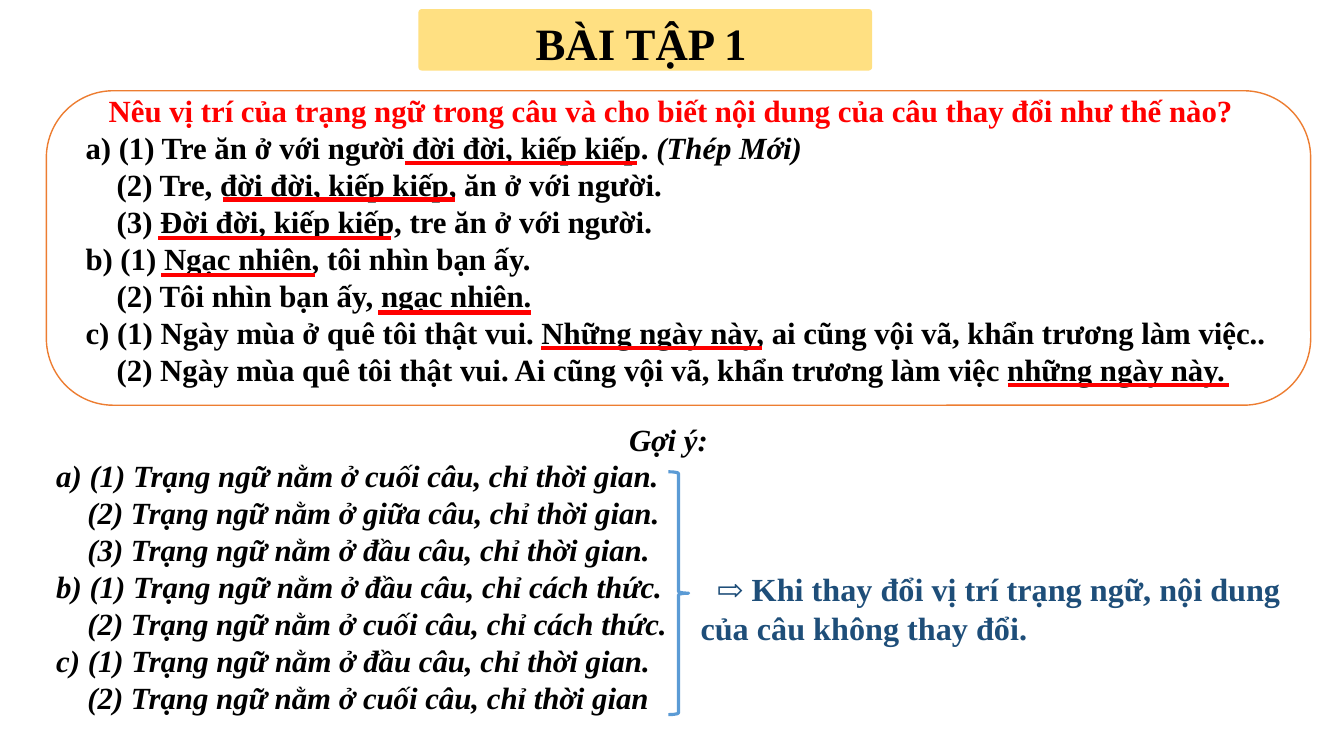
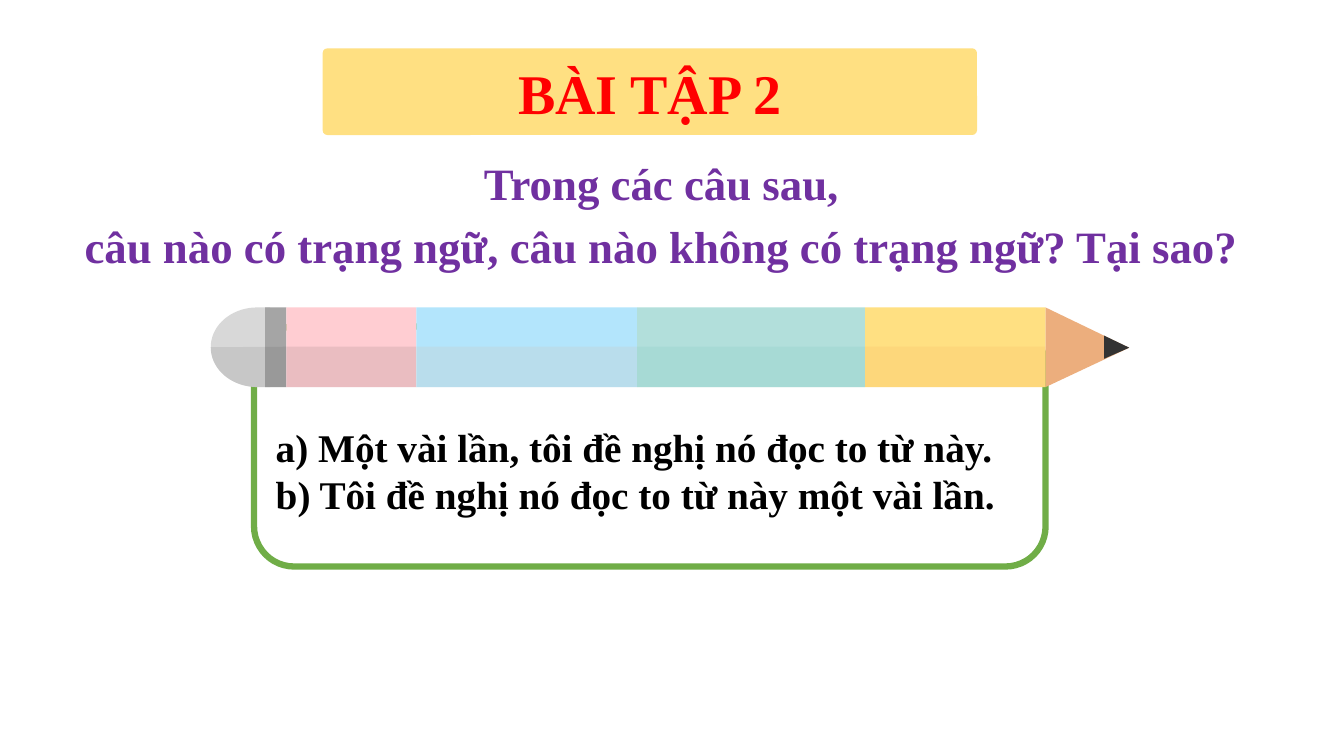
"""Build two grammar exercise slides on Vietnamese adverbials."""
from math import cos, radians, sin

from lxml import etree
from pptx import Presentation
from pptx.dml.color import RGBColor
from pptx.enum.shapes import MSO_CONNECTOR, MSO_SHAPE
from pptx.enum.text import MSO_ANCHOR, PP_ALIGN
from pptx.oxml.ns import qn
from pptx.util import Inches, Pt

RECT, ROUND, BRACE = MSO_SHAPE.RECTANGLE, MSO_SHAPE.ROUNDED_RECTANGLE, MSO_SHAPE.RIGHT_BRACE
LEFT, CENTER = PP_ALIGN.LEFT, PP_ALIGN.CENTER
TOP, MIDDLE = MSO_ANCHOR.TOP, MSO_ANCHOR.MIDDLE
STRAIGHT = MSO_CONNECTOR.STRAIGHT

FONT = "Times New Roman"
INSETS = (0.1, 0.05, 0.1, 0.05)
SUB_INDENT = 0.31
COLORS = {
    "white": "FFFFFF", "black": "000000", "red": "FF0000", "purple": "7030A0",
    "navy": "1E4E79", "blue": "5B9BD5", "orange": "ED7D31", "green": "70AD47",
    "yellow": "FFE082", "eraser": "D8D8D8", "ferrule": "A5A5A5", "pink": "FFCDD2",
    "sky": "B3E5FC", "mint": "B2DFDB", "wood": "ECAE7D", "lead": "333333",
    "peach": "F19D63", "teal": "98D4CE", "amber": "EE8944",
}

QUESTION = "Nêu vị trí của trạng ngữ trong câu và cho biết nội dung của câu thay đổi như thế nào?"
SENTENCES = [
    "a) (1) Tre ăn ở với người đời đời, kiếp kiếp. ",
    "(2) Tre, đời đời, kiếp kiếp, ăn ở với người.",
    "(3) Đời đời, kiếp kiếp, tre ăn ở với người.",
    "b) (1) Ngạc nhiên, tôi nhìn bạn ấy.",
    "(2) Tôi nhìn bạn ấy, ngạc nhiên.",
    "c) (1) Ngày mùa ở quê tôi thật vui. Những ngày này, ai cũng vội vã, khẩn trương làm việc..",
    "(2) Ngày mùa quê tôi thật vui. Ai cũng vội vã, khẩn trương làm việc những ngày này.",
]
AUTHOR = "(Thép Mới)"
UNDERLINES = [
    (4.02, 6.32, 1.62), (2.21, 4.51, 1.98), (1.57, 3.88, 2.36), (1.6, 3.12, 2.73),
    (3.75, 5.27, 3.1), (5.37, 7.56, 3.45), (10, 12.19, 3.82),
]
HINT_TITLE = "Gợi ý:"
HINTS = [
    "a) (1) Trạng ngữ nằm ở cuối câu, chỉ thời gian.",
    "(2) Trạng ngữ nằm ở giữa câu, chỉ thời gian.",
    "(3) Trạng ngữ nằm ở đầu câu, chỉ thời gian.",
    "b) (1) Trạng ngữ nằm ở đầu câu, chỉ cách thức.",
    "(2) Trạng ngữ nằm ở cuối câu, chỉ cách thức.",
    "c) (1) Trạng ngữ nằm ở đầu câu, chỉ thời gian.",
    "(2) Trạng ngữ nằm ở cuối câu, chỉ thời gian",
]
CONCLUSION = "⇨ Khi thay đổi vị trí trạng ngữ, nội dung của câu không thay đổi."
PROMPT = ["Trong các câu sau,", "câu nào có trạng ngữ, câu nào không có trạng ngữ? Tại sao?"]
EXAMPLES = [" Một vài lần, tôi đề nghị nó đọc to từ này.", " Tôi đề nghị nó đọc to từ này một vài lần."]

PENCIL_TOP, PENCIL_MID, PENCIL_BOTTOM = 3.05, 3.44, 3.84
BAND_EDGES = [2.84, 4.13, 6.32, 8.58, 10.37]
BANDS = [("pink", "lead", 10), ("sky", "peach", 10), ("mint", "teal", 40), ("yellow", "amber", 10)]


def rgb(name):
    return RGBColor.from_string(COLORS[name])


def paint(sp, fill=None, line=None, width=1, alpha=None):
    sp.shadow.inherit = False
    if fill:
        sp.fill.solid()
        sp.fill.fore_color.rgb = rgb(fill)
    else:
        sp.fill.background()
    if alpha:
        color = sp.fill._xPr.find(qn("a:solidFill"))[0]
        etree.SubElement(color, qn("a:alpha"), val=str(alpha * 1000))
    if line:
        sp.line.color.rgb = rgb(line)
        sp.line.width = Pt(width)
    else:
        sp.line.fill.background()


def add_box(shapes, kind, at, adj=(), **style):
    sp = shapes.add_shape(kind, *map(Inches, at))
    for i, value in enumerate(adj):
        sp.adjustments[i] = value
    paint(sp, **style)
    return sp


def add_outline(shapes, points, fill, alpha=None):
    pts = [(Inches(x), Inches(y)) for x, y in points]
    builder = shapes.build_freeform(*pts[0])
    builder.add_line_segments(pts[1:], close=True)
    paint(builder.convert_to_shape(), fill, alpha=alpha)


def set_indent(p, margin, first):
    pPr = p._p.get_or_add_pPr()
    pPr.set("marL", str(Inches(margin)))
    pPr.set("indent", str(Inches(first)))


def style_runs(p, size, color, italic=False):
    for r in p.runs:
        r.font.name, r.font.size = FONT, Pt(size)
        r.font.bold, r.font.italic = True, italic
        r.font.color.rgb = rgb(color)


def write(sp, lines, size, color, align=LEFT, anchor=TOP, italic=False, insets=INSETS):
    tf = sp.text_frame
    tf.word_wrap = True
    tf.vertical_anchor = anchor
    tf.margin_left, tf.margin_top, tf.margin_right, tf.margin_bottom = map(Inches, insets)
    tf.text = "\n".join(lines)
    for p in tf.paragraphs:
        p.alignment = align
        if p.text.startswith("("):
            set_indent(p, SUB_INDENT, 0)
        style_runs(p, size, color, italic)
    return tf.paragraphs


def add_text(s, at, lines, size, color, **style):
    return write(s.shapes.add_textbox(*map(Inches, at)), lines, size, color, **style)


def add_title(s, at, text, size, color, insets=INSETS):
    sp = add_box(s.shapes, ROUND, at, [0.055], fill="yellow")
    write(sp, [text], size, color, CENTER, MIDDLE, insets=insets)


def add_underline(s, x1, x2, y):
    line = s.shapes.add_connector(STRAIGHT, Inches(x1), Inches(y), Inches(x2), Inches(y))
    line.line.color.rgb = rgb("red")
    line.line.width = Pt(3)
    etree.SubElement(line._element.spPr, qn("a:effectLst"))


def eraser_arc(start, end):
    ry = (PENCIL_BOTTOM - PENCIL_TOP) / 2
    angles = [radians(a) for a in range(start, end + 1, 5)]
    return [(2.55 + 0.46 * cos(a), PENCIL_TOP + ry - ry * sin(a)) for a in angles]


def add_pencil(s):
    shapes = s.shapes.add_group_shape().shapes
    height, half = PENCIL_BOTTOM - PENCIL_TOP, PENCIL_BOTTOM - PENCIL_MID
    start, end = BAND_EDGES[0], BAND_EDGES[-1]
    tip = (11.2, 3.45)
    add_outline(shapes, [(2.68, PENCIL_TOP), *eraser_arc(90, 270), (2.68, PENCIL_BOTTOM)], "eraser")
    add_box(shapes, RECT, (2.63, PENCIL_TOP, start - 2.63, height), fill="ferrule")
    lower = [*eraser_arc(180, 270), (start, PENCIL_BOTTOM), (start, PENCIL_MID)]
    add_outline(shapes, lower, "lead", 10)
    for x1, x2, (fill, shade, alpha) in zip(BAND_EDGES, BAND_EDGES[1:], BANDS):
        add_box(shapes, RECT, (x1, PENCIL_TOP, x2 - x1, height), fill=fill)
        add_box(shapes, RECT, (x1, PENCIL_MID, x2 - x1, half), fill=shade, alpha=alpha)
    add_outline(shapes, [tip, (end, PENCIL_TOP), (end, PENCIL_BOTTOM)], "wood")
    add_outline(shapes, [tip, (10.95, 3.56), (10.95, 3.33)], "lead")


def build_exercise_1(s):
    add_box(s.shapes, ROUND, (0.46, 0.9, 12.54, 3.12), [0.213], fill="white", line="orange")
    paragraphs = add_text(s, (0.75, 0.86, 12.4, 3.06), [QUESTION, *SENTENCES], 22, "black")
    style_runs(paragraphs[0], 22, "red")
    set_indent(paragraphs[0], 0, 0.23)
    p = paragraphs[1]
    p.add_run().text = AUTHOR
    style_runs(p, 22, "black")
    p.runs[-1].font.italic = True
    add_title(s, (4.15, 0.09, 4.5, 0.61), "BÀI TẬP 1", 32, "black", (0.1, 0.06, 0.18, 0))
    for underline in UNDERLINES:
        add_underline(s, *underline)
    hints = add_text(s, (0.46, 4.12, 12.34, 3.43), [HINT_TITLE, *HINTS], 22, "black", italic=True)
    hints[0].alignment = CENTER
    add_box(s.shapes, BRACE, (6.63, 4.68, 0.2, 2.41), [0.083, 0.5], line="blue", width=2.25)
    conclusion = add_text(s, (6.85, 5.6, 5.97, 0.88), [CONCLUSION], 23, "navy")
    set_indent(conclusion[0], 0, 0.16)


def build_exercise_2(s):
    add_title(s, (3.2, 0.48, 6.49, 0.86), "BÀI TẬP 2", 40, "red")
    prompt = add_text(s, (0.61, 1.56, 11.9, 1.33), PROMPT, 32, "purple", align=CENTER)
    for p in prompt:
        p.line_spacing = 0.9
    prompt[1].space_before = Pt(10)
    card = add_box(s.shapes, ROUND, (2.52, 3.24, 7.85, 2.38), [0.167],
                   fill="white", line="green", width=4.5)
    for p in write(card, EXAMPLES, 28, "black", anchor=MIDDLE, insets=(0.1, 0.53, 0.1, 0.05)):
        set_indent(p, 0, -0.19)
        etree.SubElement(p._p.get_or_add_pPr(), qn("a:buAutoNum"), type="alphaLcParenR")
    add_pencil(s)


def main():
    prs = Presentation()
    prs.slide_width, prs.slide_height = Inches(13.33), Inches(7.5)
    for build in (build_exercise_1, build_exercise_2):
        build(prs.slides.add_slide(prs.slide_layouts[6]))
    prs.save("out.pptx")


if __name__ == "__main__":
    main()
